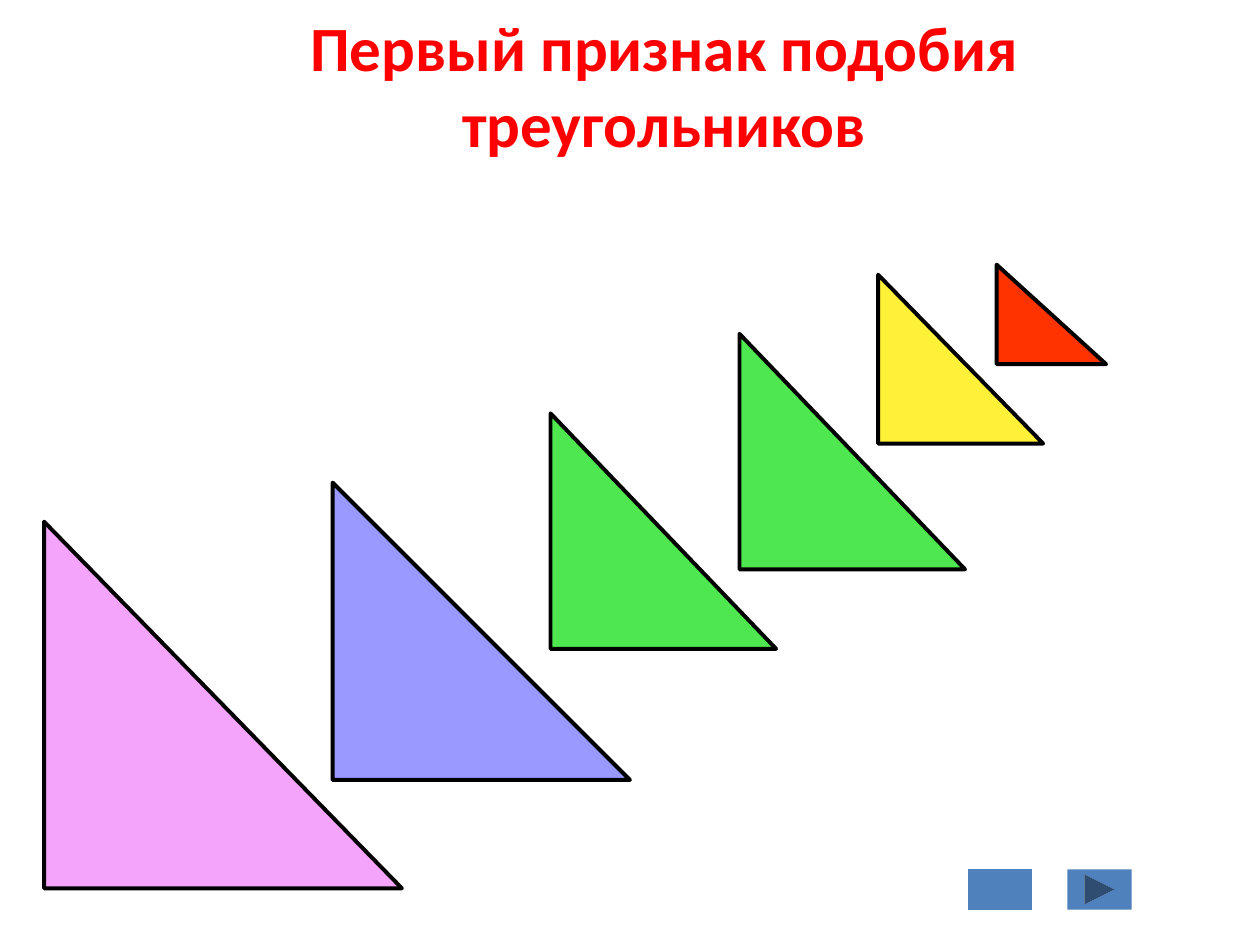
from pptx import Presentation
from pptx.dml.color import RGBColor
from pptx.enum.shapes import MSO_SHAPE
from pptx.enum.text import MSO_ANCHOR, MSO_AUTO_SIZE, PP_ALIGN
from pptx.util import Pt

TRIANGLE = MSO_SHAPE.RIGHT_TRIANGLE
BLANK = MSO_SHAPE.ACTION_BUTTON_CUSTOM
NEXT = MSO_SHAPE.ACTION_BUTTON_FORWARD_OR_NEXT
MIDDLE = MSO_ANCHOR.MIDDLE
CENTER = PP_ALIGN.CENTER
NO_FIT = MSO_AUTO_SIZE.NONE
TITLE_ONLY = 5

# Left, top, width, height within the row, back to front
TRIANGLES = [
    (544.3, 0, 62.6, 56.9, "FF3300"),
    (476.6, 5.8, 94.3, 96.5, "FFF137"),
    (289.4, 85, 128.9, 134.6, "4FE74F"),
    (164.9, 124.6, 169.9, 169.9, "9999FF"),
    (397.4, 39.6, 128.9, 134.6, "4FE74F"),
    (0, 146.9, 204.5, 209.5, "F4A4FA"),
]


def color(code):
    return RGBColor.from_string(code)


def style(item, values):
    for name, value in values.items():
        setattr(item, name, value)


def place(item, left, top, width, height):
    style(item, {"left": Pt(left), "top": Pt(top),
                 "width": Pt(width), "height": Pt(height)})


def add_shape(group, kind, box, fill, line=None):
    shape = group.shapes.add_shape(kind, *map(Pt, box))
    shape.shadow.inherit = False
    shape.fill.solid()
    shape.fill.fore_color.rgb = color(fill)
    if line:
        shape.line.color.rgb = color(line)
        shape.line.width = Pt(2.25)
    else:
        shape.line.fill.background()


def add_title(slide, box, text):
    title = slide.shapes.title
    place(title, *box)
    frame = title.text_frame
    frame.text = text
    style(frame, {"vertical_anchor": MIDDLE, "word_wrap": True,
                  "auto_size": NO_FIT})
    para = frame.paragraphs[0]
    para.alignment = CENTER
    style(para.font, {"name": "Calibri", "size": Pt(36), "bold": True})
    para.font.color.rgb = color("FF0000")


def add_row(slide, left, top):
    """Add the row of similar triangles from its top left corner."""
    group = slide.shapes.add_group_shape()
    for x, y, width, height, fill in TRIANGLES:
        box = (left + x, top + y, width, height)
        add_shape(group, TRIANGLE, box, fill, "000000")


def add_buttons(slide, left, top, width, height, step):
    group = slide.shapes.add_group_shape()
    for i, kind in enumerate((BLANK, NEXT)):
        add_shape(group, kind, (left + i * step, top, width, height), "4F81BD")


def main():
    deck = Presentation()
    style(deck, {"slide_width": Pt(720), "slide_height": Pt(540)})
    slide = deck.slides.add_slide(deck.slide_layouts[TITLE_ONLY])
    add_title(slide, (70.6, 0, 617.8, 96.5),
              "Первый признак подобия треугольников")
    add_row(slide, 25.2, 151.2)
    add_buttons(slide, 553, 496.8, 36.7, 23, 56.9)
    deck.save("out.pptx")


if __name__ == "__main__":
    main()
